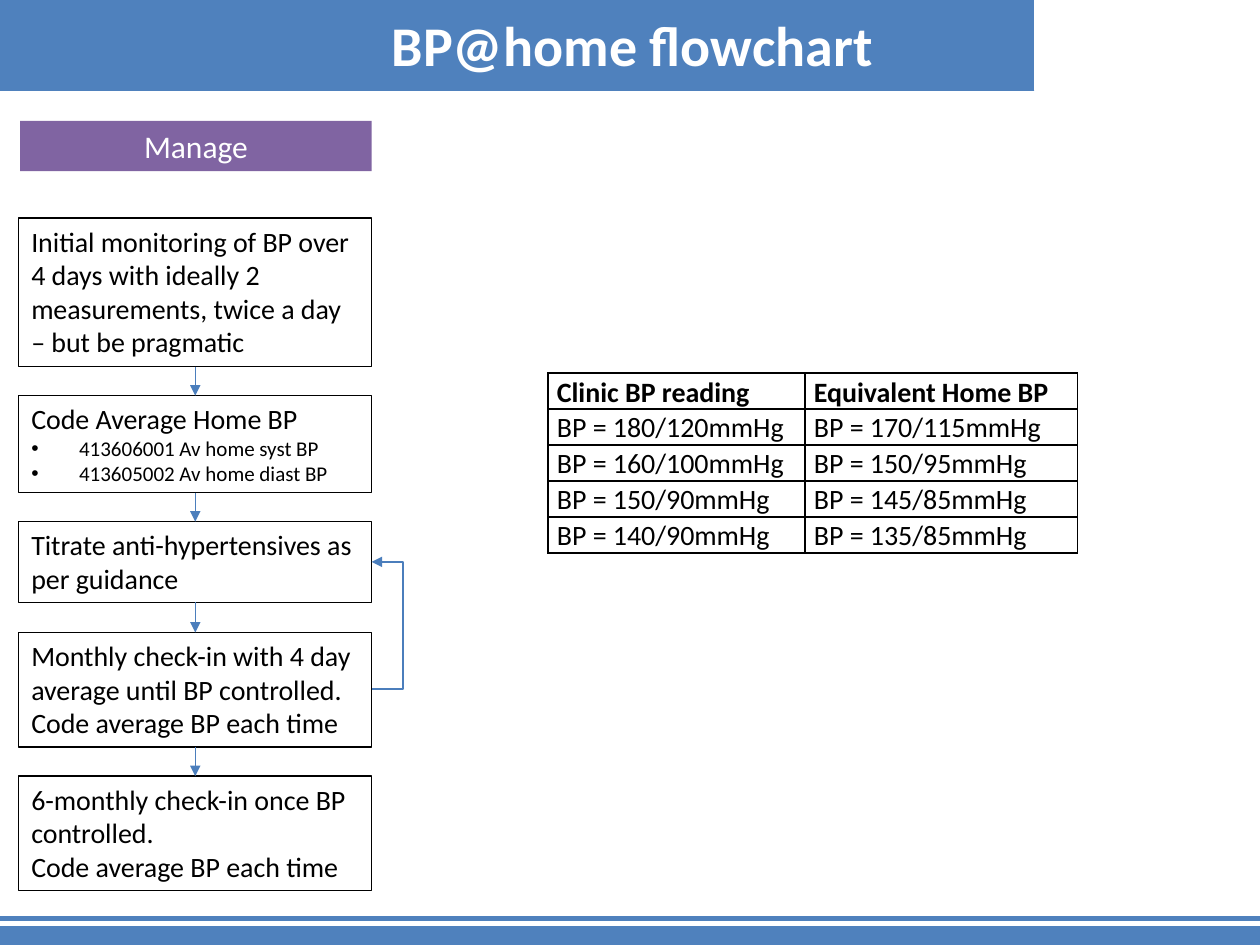
from dataclasses import dataclass
from itertools import pairwise

from lxml import etree
from pptx import Presentation
from pptx.dml.color import RGBColor
from pptx.enum.shapes import MSO_CONNECTOR as Connector, MSO_SHAPE as Shape
from pptx.enum.text import MSO_ANCHOR as Anchor, MSO_AUTO_SIZE as AutoSize, PP_ALIGN as Align
from pptx.oxml.ns import qn
from pptx.util import Inches, Pt

BLUE, ARROW_BLUE, PURPLE = "4F81BD", "4B7EBC", "8064A2"
BLACK, WHITE = "000000", "FFFFFF"
FONT = "Calibri"


@dataclass(frozen=True)
class Line:
    text: str
    size: float = 16
    color: str = BLACK
    bold: bool = False
    bullet: bool = False
    align: Align = Align.LEFT


@dataclass(frozen=True)
class Box:
    top: float
    height: float
    lines: tuple[Line, ...]
    left: float = 0.15
    width: float = 2.8
    fill: str | None = None
    border: str | None = BLACK


def rgb(color: str) -> RGBColor:
    return RGBColor.from_string(color)


def add_line(paragraph, line: Line) -> None:
    paragraph.alignment = line.align
    run = paragraph.add_run()
    run.text = line.text
    run.font.name = FONT
    run.font.size = Pt(line.size)
    run.font.bold = line.bold
    run.font.color.rgb = rgb(line.color)
    if line.bullet:
        properties = paragraph._p.get_or_add_pPr()
        properties.set("marL", str(Inches(0.38)))
        properties.set("indent", str(Inches(-0.38)))
        etree.SubElement(properties, qn("a:buFont"), typeface="Arial")
        etree.SubElement(properties, qn("a:buChar"), char="•")


def add_bar(slide, left: float, top: float, width: float, height: float, color: str) -> None:
    bar = slide.shapes.add_shape(
        Shape.RECTANGLE, Inches(left), Inches(top), Inches(width), Inches(height))
    bar.shadow.inherit = False
    bar.fill.solid()
    bar.fill.fore_color.rgb = rgb(color)
    bar.line.color.rgb = rgb(color)
    bar.line.width = Pt(2)


def add_box(slide, box: Box):
    shape = slide.shapes.add_textbox(
        Inches(box.left), Inches(box.top), Inches(box.width), Inches(box.height))
    if box.fill:
        shape.fill.solid()
        shape.fill.fore_color.rgb = rgb(box.fill)
    if box.border:
        shape.line.color.rgb = rgb(box.border)
        shape.line.width = Pt(0.75)
    frame = shape.text_frame
    frame.word_wrap = True
    frame.auto_size = AutoSize.SHAPE_TO_FIT_TEXT
    for index, line in enumerate(box.lines):
        add_line(frame.add_paragraph() if index else frame.paragraphs[0], line)
    return shape


def add_connector(slide, kind: Connector, start: tuple[float, float], end: tuple[float, float],
                  color: str, width: float, arrow: bool = True):
    connector = slide.shapes.add_connector(kind, *map(Inches, start + end))
    connector.line.color.rgb = rgb(color)
    connector.line.width = Pt(width)
    if arrow:
        etree.SubElement(connector.line._get_or_add_ln(), qn("a:tailEnd"), type="triangle")
    etree.SubElement(connector._element.spPr, qn("a:effectLst"))
    return connector


def add_return_arrow(slide, x: float, bottom: float, top: float, reach: float) -> None:
    sliver = 0.002
    arrow = add_connector(
        slide, Connector.ELBOW, (x + sliver, bottom), (x, top), ARROW_BLUE, 0.75)
    geometry = arrow._element.spPr.find(qn("a:prstGeom"))
    bend = geometry.find(qn("a:avLst"))
    if bend is None:
        bend = etree.SubElement(geometry, qn("a:avLst"))
    etree.SubElement(bend, qn("a:gd"), name="adj1", fmla=f"val {round(-reach / sliver * 100000)}")


def border_cell(cell) -> None:
    properties = cell._tc.get_or_add_tcPr()
    for index, side in enumerate(("lnL", "lnR", "lnT", "lnB")):
        edge = etree.Element(qn(f"a:{side}"), w=str(Pt(1)))
        paint = etree.SubElement(edge, qn("a:solidFill"))
        etree.SubElement(paint, qn("a:srgbClr"), val=BLACK)
        properties.insert(index, edge)


def add_readings(slide, readings: list[tuple[str, str]], widths: tuple[float, float]) -> None:
    table = slide.shapes.add_table(
        len(readings), len(widths), Inches(4.35), Inches(2.96),
        Inches(sum(widths)), Inches(0.28 * len(readings))).table
    table.first_row = table.horz_banding = False
    for column, width in zip(table.columns, widths):
        column.width = Inches(width)
    for row_index, reading in enumerate(readings):
        for column_index, text in enumerate(reading):
            cell = table.cell(row_index, column_index)
            cell.fill.background()
            cell.margin_left = cell.margin_right = Inches(0.07)
            cell.margin_top = cell.margin_bottom = 0
            paragraph = cell.text_frame.paragraphs[0]
            paragraph.line_spacing = 1.07
            paragraph.space_after = Pt(8)
            add_line(paragraph, Line(text, bold=row_index == 0))
            border_cell(cell)


def add_title(slide, text: str) -> None:
    title = slide.shapes.title
    title.left, title.top, title.width, title.height = map(Inches, (0.52, -0.01, 9, 0.72))
    title.text_frame.vertical_anchor = Anchor.MIDDLE
    add_line(title.text_frame.paragraphs[0], Line(text, 32, WHITE, bold=True, align=Align.CENTER))
    title._element.getparent().append(title._element)


STAGE = Box(0.96, 0.4, (Line("Manage", 18, WHITE, align=Align.CENTER),),
            left=0.16, width=2.79, fill=PURPLE, border=None)

STEPS = [
    Box(1.73, 1.18, (
        Line("Initial monitoring of BP over"),
        Line("4 days with ideally 2 measurements, twice a day – but be pragmatic"))),
    Box(3.14, 0.77, (
        Line("Code Average Home BP"),
        Line("413606001 Av home syst BP", 12, bullet=True),
        Line("413605002 Av home diast BP", 12, bullet=True))),
    Box(4.14, 0.64, (Line("Titrate anti-hypertensives as per guidance"),)),
    Box(5.02, 0.91, (
        Line("Monthly check-in with 4 day average until BP controlled. Code average BP each time"),)),
    Box(6.16, 0.91, (
        Line("6-monthly check-in once BP controlled."),
        Line("Code average BP each time"))),
]

READINGS = [
    ("Clinic BP reading", "Equivalent Home BP"),
    ("BP = 180/120mmHg", "BP = 170/115mmHg"),
    ("BP = 160/100mmHg", "BP = 150/95mmHg"),
    ("BP = 150/90mmHg", "BP = 145/85mmHg"),
    ("BP = 140/90mmHg", "BP = 135/85mmHg"),
]


def main() -> None:
    deck = Presentation()
    deck.slide_width, deck.slide_height = Inches(10), Inches(7.5)
    slide = deck.slides.add_slide(deck.slide_layouts[5])

    add_connector(slide, Connector.STRAIGHT, (-0.02, 7.29), (10, 7.29), BLUE, 3, arrow=False)
    add_bar(slide, 0, 7.36, 10, 0.14, BLUE)
    add_bar(slide, 0, 0, 10, 0.71, BLUE)
    add_bar(slide, 8.22, 0, 1.78, 0.72, WHITE)
    add_title(slide, "BP@home flowchart")

    add_box(slide, STAGE)
    step_shapes = [add_box(slide, step) for step in STEPS]
    for (upper, lower), (source, target) in zip(pairwise(STEPS), pairwise(step_shapes)):
        arrow = add_connector(slide, Connector.STRAIGHT, (1.55, upper.top + upper.height),
                              (1.55, lower.top), ARROW_BLUE, 0.75)
        arrow.begin_connect(source, 2)
        arrow.end_connect(target, 0)
    add_return_arrow(slide, 2.95, 5.47, 4.46, 0.25)
    add_readings(slide, READINGS, (2.04, 2.16))

    deck.save("out.pptx")


if __name__ == "__main__":
    main()
